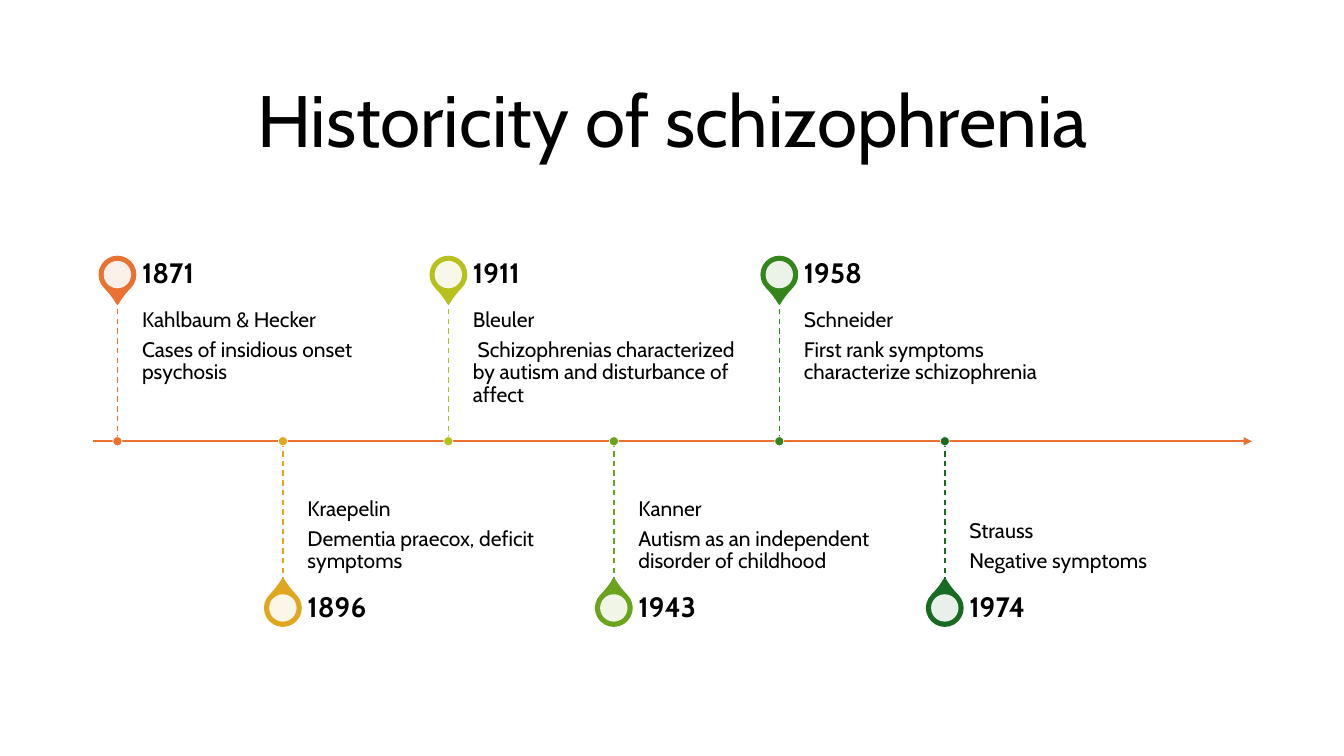
"""Build a timeline slide on the history of schizophrenia."""
from dataclasses import dataclass

from pptx import Presentation
from pptx.dml.color import RGBColor as Rgb
from pptx.enum.dml import MSO_LINE as Dash
from pptx.enum.shapes import MSO_CONNECTOR as Link, MSO_SHAPE as Kind
from pptx.enum.text import MSO_ANCHOR as Anchor, MSO_AUTO_SIZE as Fit, PP_ALIGN as Align
from pptx.oxml.ns import qn
from pptx.util import Cm, Pt
from lxml.etree import SubElement as Sub

TITLE = "Historicity of schizophrenia"
EVENTS = [
    ("1871", "Kahlbaum & Hecker", "Cases of insidious onset psychosis", "E97132"),
    ("1896", "Kraepelin", "Dementia praecox, deficit symptoms", "E0A61D"),
    ("1911", "Bleuler", " Schizophrenias characterized by autism and disturbance of affect", "B7C11E"),
    ("1943", "Kanner", "Autism as an independent disorder of childhood", "6BA31D"),
    ("1958", "Schneider", "First rank symptoms characterize schizophrenia", "34861C"),
    ("1974", "Strauss", "Negative symptoms", "196B24"),
]


@dataclass(frozen=True)
class Theme:
    """Hold the colours, font and type sizes."""
    font: str = "Cabin"
    ink: str = "000000"
    white: str = "FFFFFF"
    axis: str = "E97132"
    title: float = 52
    year: float = 20
    body: float = 15


LOOK = Theme()
LEFT, WIDE, AXIS = 2.34, 29.21, 11.12
FIRST, STEP = 2.96, 4.17
STEM, REACH = 3.58, 4.2
PIN, HOLE, DOT = 0.9, 0.69, 0.23
INDENT, TEXT, YEAR = 0.62, 6.93, 1.26


def write(frame, lines, size, bold=False, align=Align.LEFT, gap=0.35):
    """Fill a text frame with one paragraph per line."""
    for i, line in enumerate(lines):
        para = frame.paragraphs[0] if i == 0 else frame.add_paragraph()
        para.alignment = align
        para.line_spacing = 0.9
        para.space_before = Pt(0)
        para.space_after = Pt(size * gap)
        run = para.add_run()
        run.text = line
        run.font.name = LOOK.font
        run.font.size = Pt(size)
        run.font.bold = bold
        run.font.color.rgb = Rgb.from_string(LOOK.ink)


def label(slide, x, y, high, lines, size, anchor, pads, bold=False):
    """Add a text box with its own insets."""
    box = slide.shapes.add_textbox(Cm(x), Cm(y), Cm(TEXT), Cm(high))
    frame = box.text_frame
    frame.word_wrap = True
    frame.vertical_anchor = anchor
    sides = [Cm(pad) for pad in pads]
    frame.margin_left, frame.margin_top, frame.margin_right, frame.margin_bottom = sides
    write(frame, lines, size, bold)


def line(slide, x, y, to_x, to_y, tint, width):
    """Add a straight line without a shadow."""
    link = slide.shapes.add_connector(Link.STRAIGHT, Cm(x), Cm(y), Cm(to_x), Cm(to_y))
    link.line.color.rgb = Rgb.from_string(tint)
    link.line.width = Pt(width)
    Sub(link._element.spPr, qn("a:effectLst"))
    return link.line


def disc(slide, kind, x, y, size, fill, edge=None, width=0):
    """Add a filled shape centred on a point."""
    half = size / 2
    shape = slide.shapes.add_shape(kind, Cm(x - half), Cm(y - half), Cm(size), Cm(size))
    shape.shadow.inherit = False
    shape.fill.solid()
    shape.fill.fore_color.rgb = Rgb.from_string(fill)
    if edge:
        shape.line.color.rgb = Rgb.from_string(edge)
        shape.line.width = Pt(width)
    else:
        shape.line.fill.background()
    return shape


def event(slide, i, year, name, note, tint):
    """Add one pin with its stem, dot, year and note."""
    up = i % 2 == 0
    side = -1 if up else 1
    x = FIRST + i * STEP
    y = AXIS + side * REACH
    pin = disc(slide, Kind.TEAR, x, y, PIN, tint, tint, 1.5)
    pin.adjustments[0] = 1.15
    pin.rotation = 135 if up else 315
    hole = disc(slide, Kind.OVAL, x, y, HOLE, LOOK.white)
    tone = hole._element.spPr.find(qn("a:solidFill"))[0]
    Sub(tone, qn("a:alpha"), val="90000")
    top = AXIS - STEM if up else AXIS
    anchor = Anchor.TOP if up else Anchor.BOTTOM
    pads = (0, 0.25, 0.25, 0.41) if up else (0, 0.41, 0, 0.25)
    label(slide, x + INDENT, top, STEM, [name, note], LOOK.body, anchor, pads)
    label(slide, x + INDENT, y - YEAR / 2, YEAR, [year], LOOK.year,
          Anchor.MIDDLE, (0, 0, 0.36, 0), True)
    stem = line(slide, x, top, x, top + STEM, tint, 1)
    stem.dash_style = Dash.DASH
    disc(slide, Kind.OVAL, x, AXIS, DOT, tint, LOOK.white, 0.5)


def main():
    """Build and save the slide."""
    deck = Presentation()
    deck.slide_width, deck.slide_height = Cm(33.87), Cm(19.05)
    slide = deck.slides.add_slide(deck.slide_layouts[5])
    title = slide.shapes.title
    title.left, title.top, title.width, title.height = Cm(LEFT), Cm(1.55), Cm(WIDE), Cm(3.15)
    title.text_frame.auto_size = Fit.NONE
    title.text_frame.word_wrap = True
    title.text_frame.vertical_anchor = Anchor.MIDDLE
    write(title.text_frame, [TITLE], LOOK.title, align=Align.CENTER, gap=0)
    axis = line(slide, LEFT, AXIS, LEFT + WIDE, AXIS, LOOK.axis, 1.5)
    Sub(axis._get_or_add_ln(), qn("a:tailEnd"), type="triangle")
    for i, item in enumerate(EVENTS):
        event(slide, i, *item)
    deck.save("out.pptx")


if __name__ == "__main__":
    main()
